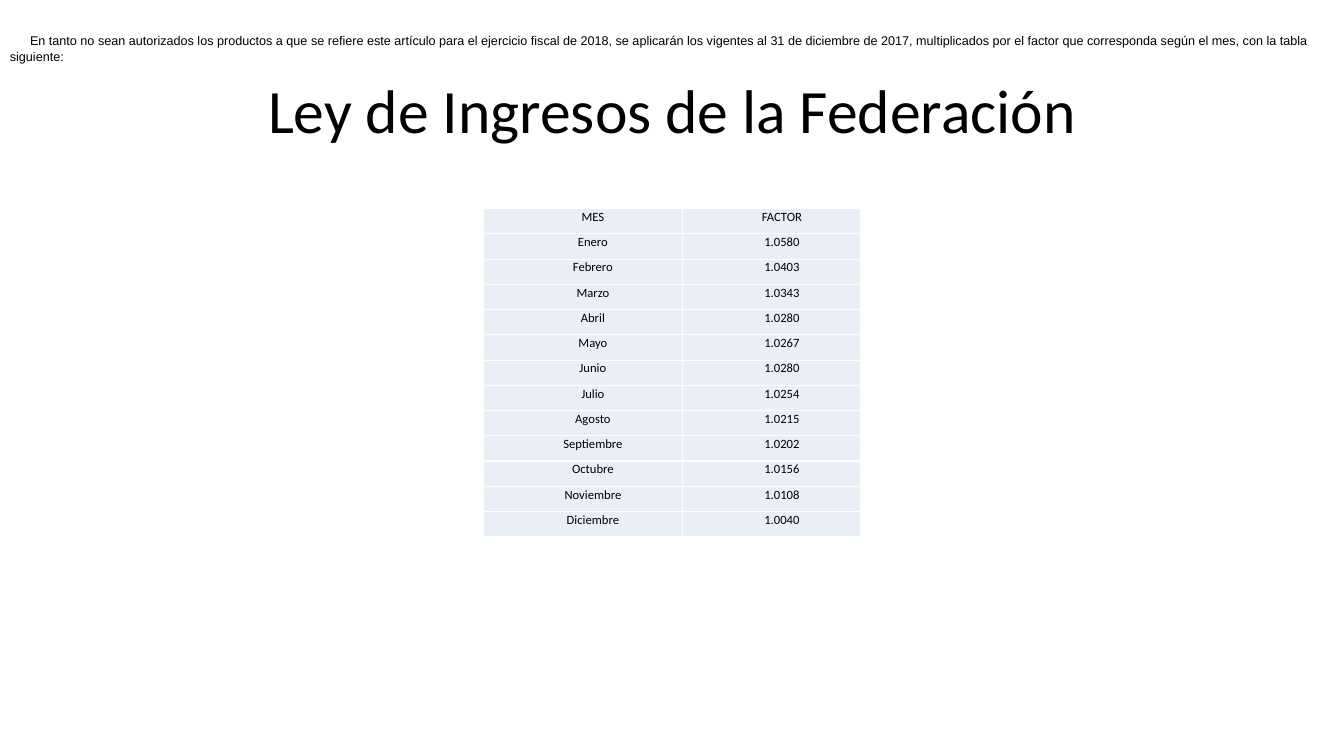
from dataclasses import dataclass

from lxml.etree import SubElement
from pptx import Presentation
from pptx.dml.color import RGBColor as Rgb
from pptx.enum.text import MSO_ANCHOR as Anchor, PP_ALIGN as Align
from pptx.oxml.ns import qn
from pptx.util import Inches, Pt


@dataclass(frozen=True)
class Theme:
    ink: str = "000000"
    fill: str = "EAEFF7"
    rule: str = "FFFFFF"
    head: str = "Calibri"
    body: str = "Arial"
    big: int = 44
    small: int = 9


@dataclass(frozen=True)
class Label:
    text: str
    font: str
    size: int
    align: Align
    indent: float = 0


@dataclass(frozen=True)
class Box:
    left: float
    top: float
    width: float
    height: float

    def emu(self) -> list:
        return [Inches(v) for v in (self.left, self.top, self.width, self.height)]


THEME = Theme()
INDENT = 0.2
ROWS = [
    ("MES", "FACTOR"),
    ("Enero", "1.0580"),
    ("Febrero", "1.0403"),
    ("Marzo", "1.0343"),
    ("Abril", "1.0280"),
    ("Mayo", "1.0267"),
    ("Junio", "1.0280"),
    ("Julio", "1.0254"),
    ("Agosto", "1.0215"),
    ("Septiembre", "1.0202"),
    ("Octubre", "1.0156"),
    ("Noviembre", "1.0108"),
    ("Diciembre", "1.0040"),
]
WIDTHS = (1.98, 1.77)
TITLE = Label("Ley de Ingresos de la Federación", THEME.head, THEME.big, Align.CENTER)
INTRO = Label(
    "En tanto no sean autorizados los productos a que se refiere este artículo "
    "para el ejercicio fiscal de 2018, se aplicarán los vigentes al 31 de diciembre "
    "de 2017, multiplicados por el factor que corresponda según el mes, con la tabla "
    "siguiente:",
    THEME.body, THEME.small, Align.LEFT, INDENT)


def write(frame, label: Label):
    """Fill the first paragraph of a frame and return it."""
    para = frame.paragraphs[0]
    para.alignment = label.align
    if label.indent:
        props = para._p.get_or_add_pPr()
        props.set("marL", "0")
        props.set("indent", str(Inches(label.indent)))
    run = para.add_run()
    run.text = label.text
    run.font.name = label.font
    run.font.size = Pt(label.size)
    run.font.color.rgb = Rgb.from_string(THEME.ink)
    return para


def add_text(slide, box: Box, label: Label, anchor: Anchor):
    frame = slide.shapes.add_textbox(*box.emu()).text_frame
    frame.word_wrap = True
    frame.vertical_anchor = anchor
    return frame, write(frame, label)


def edge(cell) -> None:
    """Draw a thin rule on all four sides of a cell."""
    props = cell._tc.get_or_add_tcPr()
    for spot, side in enumerate(("lnL", "lnR", "lnT", "lnB")):
        line = props.makeelement(qn(f"a:{side}"), {"w": str(Pt(1))})
        props.insert(spot, line)
        solid = SubElement(line, qn("a:solidFill"))
        SubElement(solid, qn("a:srgbClr"), val=THEME.rule)


def style(cell, text: str) -> None:
    cell.margin_left = cell.margin_right = Inches(0.05)
    cell.margin_top = cell.margin_bottom = 0
    cell.fill.solid()
    cell.fill.fore_color.rgb = Rgb.from_string(THEME.fill)
    edge(cell)
    label = Label(text, THEME.head, THEME.small, Align.CENTER, INDENT)
    para = write(cell.text_frame, label)
    para.line_spacing = Pt(11.5)
    para.space_after = Pt(5)


def add_grid(slide, box: Box) -> None:
    table = slide.shapes.add_table(len(ROWS), len(WIDTHS), *box.emu()).table
    table.first_row = table.horz_banding = False
    for col, width in zip(table.columns, WIDTHS):
        col.width = Inches(width)
    for row, texts in zip(table.rows, ROWS):
        for cell, text in zip(row.cells, texts):
            style(cell, text)


def main() -> None:
    deck = Presentation()
    deck.slide_width, deck.slide_height = Inches(13.33), Inches(7.5)
    slide = deck.slides.add_slide(deck.slide_layouts[6])
    _, head = add_text(slide, Box(0.92, 0.4, 11.5, 1.45), TITLE, Anchor.MIDDLE)
    head.line_spacing = 0.9
    add_grid(slide, Box(4.79, 2.07, sum(WIDTHS), 3.26))
    frame, _ = add_text(slide, Box(0, 0.27, 13.23, 0.71), INTRO, Anchor.TOP)
    frame.margin_top = Inches(0.06)
    deck.save("out.pptx")


if __name__ == "__main__":
    main()
